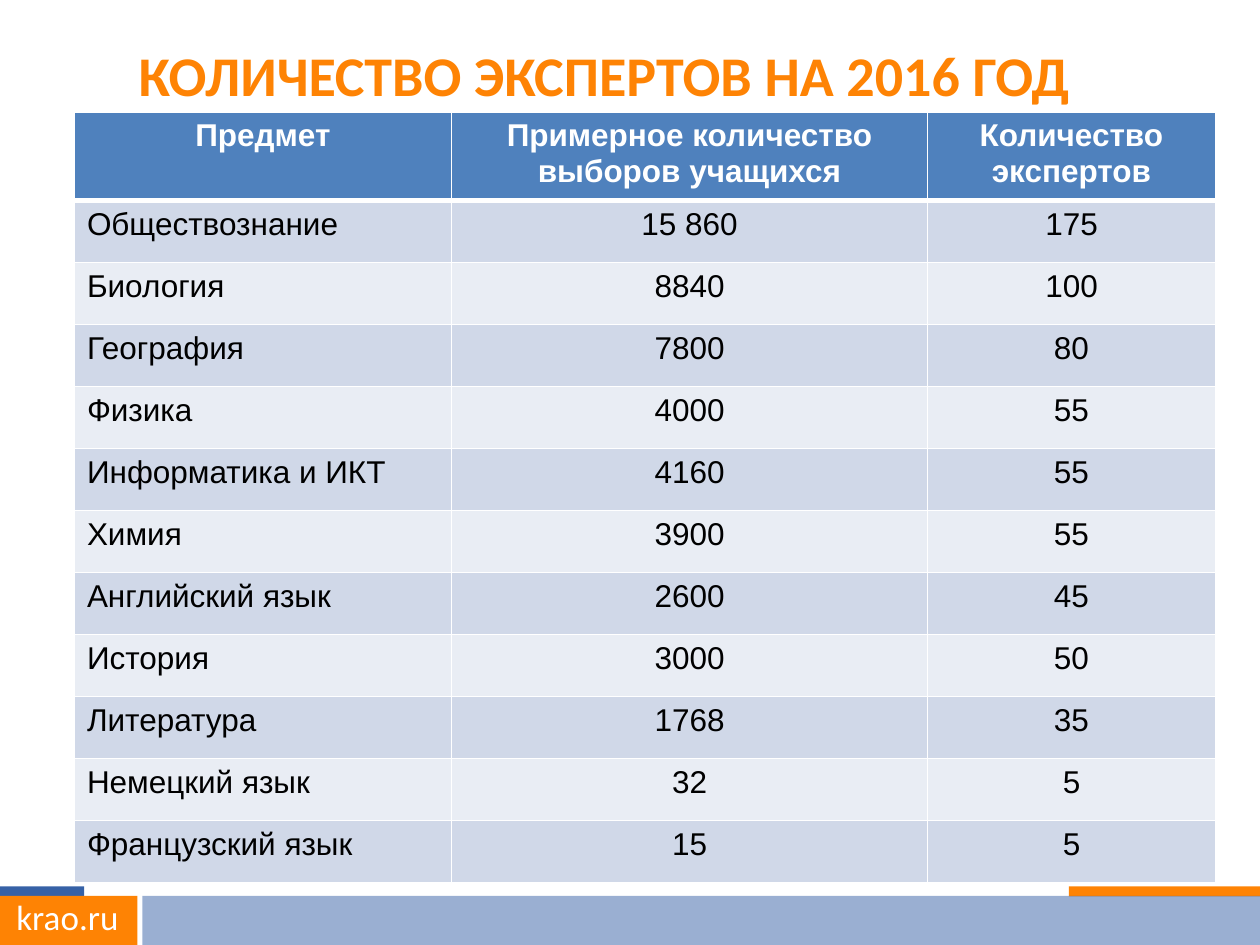
from lxml.etree import SubElement as Sub
from pptx import Presentation
from pptx.dml.color import RGBColor as Rgb
from pptx.enum.shapes import MSO_SHAPE as Kind
from pptx.enum.text import MSO_ANCHOR as Anchor, PP_ALIGN as Align
from pptx.oxml import parse_xml
from pptx.oxml.ns import nsdecls, qn
from pptx.util import Cm, Pt


def tint(hue):
    return Rgb.from_string(hue)


def style(part, face, size, hue, bold, side):
    part.alignment = side
    for run in part.runs:
        font = run.font
        font.name, font.size, font.bold = face, Pt(size), bold
        font.color.rgb = tint(hue)


deck = Presentation()
deck.slide_width, deck.slide_height = Cm(25.4), Cm(19.05)
slide = deck.slides.add_slide(deck.slide_layouts[5])
shapes = slide.shapes

bars = [
    (0, 17.87, 1.7, 0.2, "3661A6"),
    (21.55, 17.87, 3.85, 0.2, "FE8304"),
    (0, 18.06, 2.77, 0.99, "FE8304"),
    (2.87, 18.06, 22.53, 0.99, "3661A6"),
]
for x, y, wide, high, hue in bars:
    bar = shapes.add_shape(Kind.RECTANGLE, Cm(x), Cm(y), Cm(wide), Cm(high))
    bar.shadow.inherit = False
    bar.fill.solid()
    bar.fill.fore_color.rgb = tint(hue)
    bar.line.fill.background()
shade = bar.fill._xPr.find(qn("a:solidFill"))[0]
Sub(shade, qn("a:alpha"), val="50000")

site = shapes.add_textbox(0, Cm(17.93), Cm(2.72), Cm(1.12))
site.text_frame.word_wrap = True
site.text_frame.text = "krao.ru"
style(site.text_frame.paragraphs[0], "Calibri", 20, "FFFFFF", False, Align.CENTER)

title = shapes.title
title.left, title.top, title.width, title.height = Cm(2.54), 0, Cm(22.86), Cm(2.97)
title.text_frame.text = "КОЛИЧЕСТВО ЭКСПЕРТОВ НА 2016 ГОД"
title.text_frame.vertical_anchor = Anchor.MIDDLE
style(title.text_frame.paragraphs[0], "Calibri", 32, "FE8304", True, Align.LEFT)

rows = [
    ("Предмет", "Примерное количество выборов учащихся", "Количество экспертов"),
    ("Обществознание", "15 860", "175"),
    ("Биология", "8840", "100"),
    ("География", "7800", "80"),
    ("Физика", "4000", "55"),
    ("Информатика и ИКТ", "4160", "55"),
    ("Химия", "3900", "55"),
    ("Английский язык", "2600", "45"),
    ("История", "3000", "50"),
    ("Литература", "1768", "35"),
    ("Немецкий язык", "32", "5"),
    ("Французский язык", "15", "5"),
]
frame = shapes.add_table(len(rows), 3, Cm(1.5), Cm(2.26), Cm(23), Cm(15.5))
table = frame.table
for col, wide in zip(table.columns, (7.6, 9.6, 5.8)):
    col.width = Cm(wide)

for r, row in enumerate(rows):
    head = r == 0
    table.rows[r].height = Cm(1.75 if head else 1.25)
    fill = "4F81BD" if head else "D0D8E8" if r % 2 else "E9EDF4"
    for c, text in enumerate(row):
        cell = table.cell(r, c)
        cell.text_frame.text = text
        side = Align.CENTER if head or c else Align.LEFT
        ink = "FFFFFF" if head else "000000"
        style(cell.text_frame.paragraphs[0], "Arial", 18, ink, head, side)
        edges = cell._tc.get_or_add_tcPr()
        for edge in "LRTB":
            thick = (edge == "B" and r == 0) or (edge == "T" and r == 1)
            edges.append(parse_xml(
                f'<a:ln{edge} {nsdecls("a")} w="{Pt(3 if thick else 1)}">'
                '<a:solidFill><a:srgbClr val="FFFFFF"/></a:solidFill>'
                f'</a:ln{edge}>'))
        cell.fill.solid()
        cell.fill.fore_color.rgb = tint(fill)

deck.save("out.pptx")
